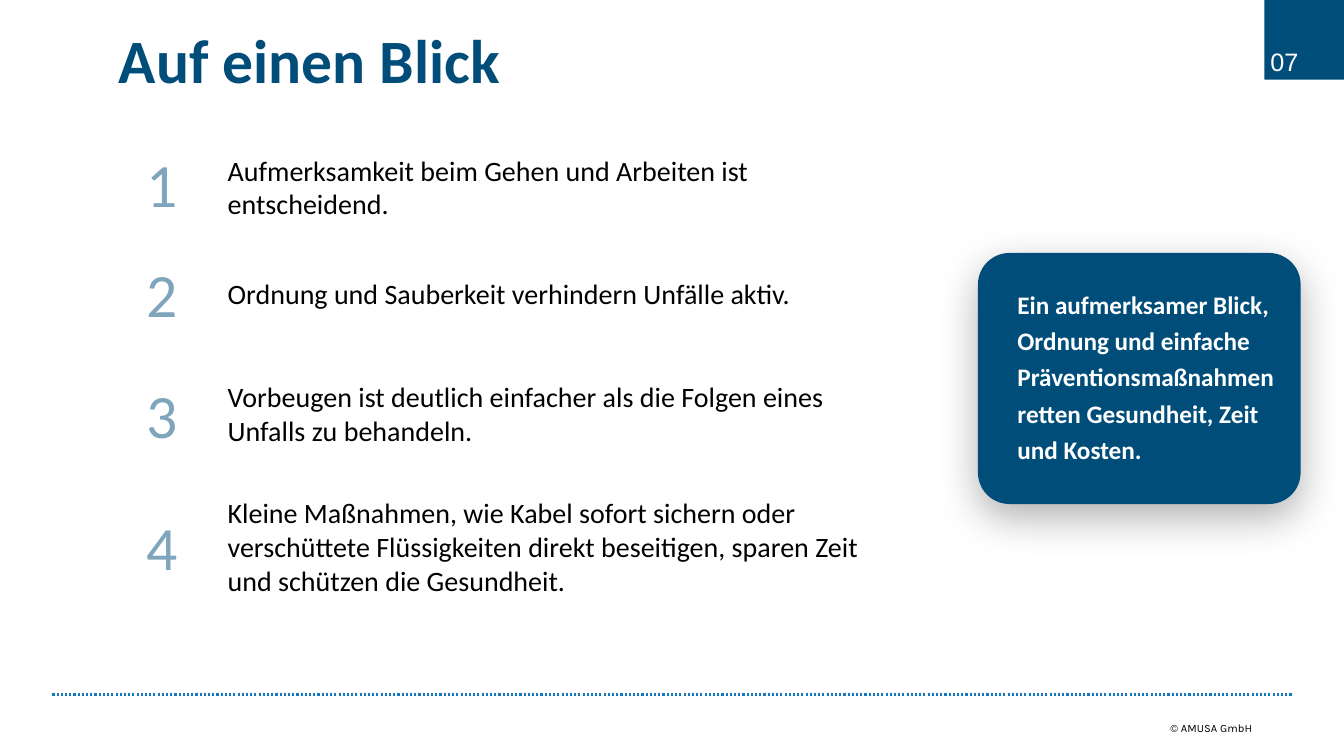
from lxml import etree
from pptx import Presentation
from pptx.dml.color import RGBColor
from pptx.enum.dml import MSO_LINE
from pptx.enum.shapes import MSO_CONNECTOR, MSO_SHAPE
from pptx.enum.text import MSO_ANCHOR as ANCHOR, MSO_AUTO_SIZE as AUTO_SIZE, PP_ALIGN as ALIGN
from pptx.oxml import parse_xml
from pptx.oxml.ns import nsdecls, qn
from pptx.util import Pt

PX = 9144  # 100 px to the inch
BLUE, PALE_BLUE, DOT_BLUE = "004D7A", "7FA5BC", "1179BF"
BLACK, WHITE = "000000", "FFFFFF"


def color(hex_string):
    return RGBColor.from_string(hex_string)


def write(shape, text, size, hex_string, font="Calibri", bold=False,
          insets=(10, 5, 10, 5), anchor=ANCHOR.TOP, wrap=True):
    """Set the text of a shape and return its paragraph."""
    frame = shape.text_frame
    frame.text = text
    frame.word_wrap = wrap
    frame.auto_size = AUTO_SIZE.NONE
    frame.vertical_anchor = anchor
    frame.margin_left, frame.margin_top, frame.margin_right, frame.margin_bottom = (
        inset * PX for inset in insets)
    paragraph = frame.paragraphs[0]
    paragraph.alignment = ALIGN.LEFT
    run_font = paragraph.runs[0].font
    run_font.name, run_font.size, run_font.bold = font, Pt(size), bold
    run_font.color.rgb = color(hex_string)
    return paragraph


presentation = Presentation()
presentation.slide_width, presentation.slide_height = 1333 * PX, 750 * PX
slide = presentation.slides.add_slide(presentation.slide_layouts[5])
shapes = slide.shapes
no_insets = (0, 0, 0, 0)

# Footer
footer = shapes.add_textbox(1111 * PX, 714 * PX, 131 * PX, 14 * PX)
paragraph = write(footer, "© AMUSA GmbH", 8, BLACK, font="Karla",
                  insets=no_insets, anchor=ANCHOR.MIDDLE)
paragraph.alignment = ALIGN.RIGHT
paragraph.line_spacing = Pt(10.7)

footer_line = shapes.add_connector(MSO_CONNECTOR.STRAIGHT, 52 * PX, 689 * PX, 1281 * PX, 689 * PX)
footer_line.line.color.rgb = color(DOT_BLUE)
footer_line.line.width = Pt(1.5)
footer_line.line.dash_style = MSO_LINE.ROUND_DOT
etree.SubElement(footer_line._element.spPr, qn("a:effectLst"))

# Title
title = shapes.title
title.left, title.top, title.width, title.height = 108 * PX, 46 * PX, 882 * PX, 56 * PX
paragraph = write(title, "Auf einen Blick", 44, BLUE, bold=True)
paragraph.line_spacing = Pt(32)

# Key message card with soft shadow
card = shapes.add_shape(MSO_SHAPE.ROUNDED_RECTANGLE, 970 * PX, 251 * PX, 320 * PX, 249 * PX)
card.adjustments[0] = 0.125
paragraph = write(
    card,
    "Ein aufmerksamer Blick, Ordnung und einfache Präventionsmaßnahmen "
    "retten Gesundheit, Zeit und Kosten.",
    18, WHITE, bold=True, insets=(30, 5, 10, 30), anchor=ANCHOR.BOTTOM)
paragraph.line_spacing = 1.2

# Page number
corner = shapes.add_shape(MSO_SHAPE.RECTANGLE, 1254 * PX, 0, 79 * PX, 79 * PX)
for panel in (card, corner):
    panel.shadow.inherit = False
    panel.fill.solid()
    panel.fill.fore_color.rgb = color(BLUE)
    panel.line.fill.background()
card._element.spPr.find(qn("a:effectLst")).append(parse_xml(
    f'<a:outerShdw {nsdecls("a")} blurRad="{Pt(30)}" dist="{Pt(10)}" dir="5400000" '
    f'algn="t" rotWithShape="0"><a:srgbClr val="{BLACK}"><a:alpha val="30000"/>'
    '</a:srgbClr></a:outerShdw>'))
page_number = shapes.add_textbox(1260 * PX, 46 * PX, 30 * PX, 30 * PX)
write(page_number, "07", 18, WHITE, font="Arial", insets=no_insets, wrap=False)

# Numbered takeaways: number top, text top, text height, text
takeaways = [
    (145, 147, 77, "Aufmerksamkeit beim Gehen und Arbeiten ist entscheidend."),
    (254, 269, 44, "Ordnung und Sauberkeit verhindern Unfälle aktiv."),
    (374, 372, 77, "Vorbeugen ist deutlich einfacher als die Folgen eines Unfalls zu behandeln."),
    (505, 487, 111, "Kleine Maßnahmen, wie Kabel sofort sichern oder verschüttete Flüssigkeiten "
                    "direkt beseitigen, sparen Zeit und schützen die Gesundheit."),
]
for number, (number_top, text_top, text_height, text) in enumerate(takeaways, start=1):
    number_box = shapes.add_textbox(145 * PX, number_top * PX, 58 * PX, 74 * PX)
    write(number_box, str(number), 44, PALE_BLUE, insets=no_insets)
    text_box = shapes.add_textbox(216 * PX, text_top * PX, 673 * PX, text_height * PX)
    write(text_box, text, 20, BLACK)

presentation.save("out.pptx")
